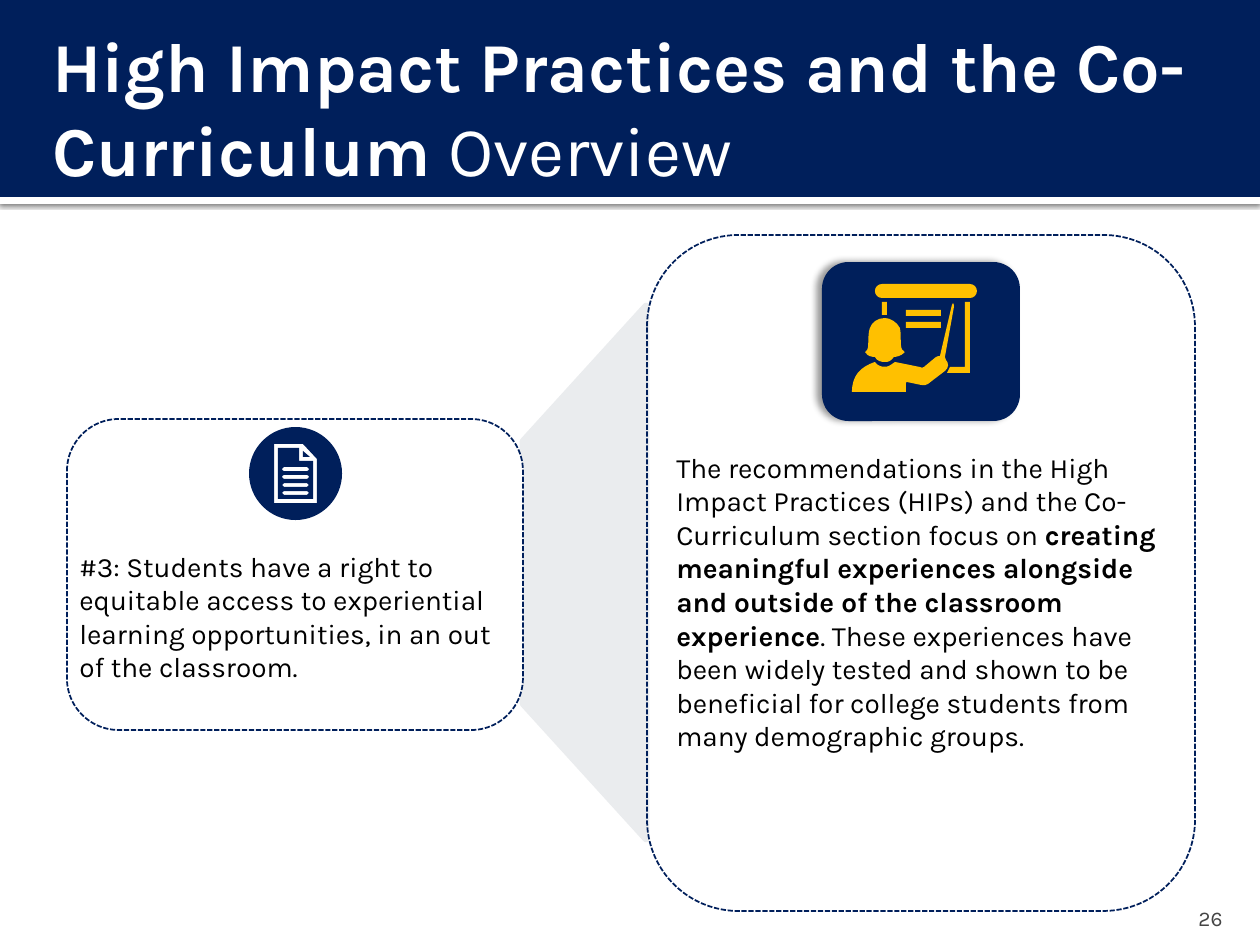
import lxml.etree
import pptx
import pptx.dml.color
import pptx.enum.dml
import pptx.enum.shapes
import pptx.enum.text
import pptx.oxml.ns
import pptx.util

PX = 914400 / 126
FONT = "Karla"
NAVY, GOLD, WHITE, BLACK = "001F5B", "FFC000", "FFFFFF", "000000"
KIND = pptx.enum.shapes.MSO_SHAPE
ALIGN = pptx.enum.text.PP_ALIGN
ANCHOR = pptx.enum.text.MSO_ANCHOR
qn = pptx.oxml.ns.qn


def emu(px):
    return pptx.util.Emu(round(px * PX))


def paint(target, color):
    """Give a fill, line or font colour object a hex colour."""
    target.rgb = pptx.dml.color.RGBColor.from_string(color)


def style(shape, fill=None, line=None, width=1, dashed=False):
    shape.shadow.inherit = False
    if fill:
        shape.fill.solid()
        paint(shape.fill.fore_color, fill)
    else:
        shape.fill.background()
    if line:
        paint(shape.line.color, line)
        shape.line.width = pptx.util.Pt(width)
        if dashed:
            shape.line.dash_style = pptx.enum.dml.MSO_LINE.SQUARE_DOT
    else:
        shape.line.fill.background()


def add_block(page, kind, box, **look):
    shape = page.shapes.add_shape(kind, *map(emu, box))
    style(shape, **look)
    return shape


def add_shadow(shape, alpha, blur, distance, angle):
    effects = shape.element.spPr.find(qn("a:effectLst"))
    shadow = lxml.etree.SubElement(
        effects, qn("a:outerShdw"), blurRad=str(pptx.util.Pt(blur)),
        dist=str(pptx.util.Pt(distance)), dir=str(angle * 60000),
        algn="ctr", rotWithShape="0")
    color = lxml.etree.SubElement(shadow, qn("a:srgbClr"), val=BLACK)
    lxml.etree.SubElement(color, qn("a:alpha"), val=str(alpha * 1000))


def add_text(page, box, spans, size=16, color=BLACK, align=ALIGN.LEFT,
             anchor=ANCHOR.TOP, grow=False):
    """Place one paragraph made of (text, bold) spans."""
    frame = page.shapes.add_textbox(*map(emu, box)).text_frame
    frame.word_wrap = True
    frame.vertical_anchor = anchor
    if grow:
        frame.auto_size = pptx.enum.text.MSO_AUTO_SIZE.SHAPE_TO_FIT_TEXT
    para = frame.paragraphs[0]
    para.alignment = align
    for text, bold in spans:
        span = para.add_run()
        span.text = text
        span.font.name = FONT
        span.font.size = pptx.util.Pt(size)
        span.font.bold = bold
        paint(span.font.color, color)
    return frame


def rectangle(x, y, w, h):
    return [(x, y), (x + w, y), (x + w, y + h), (x, y + h)]


def pill(x, y, w, h):
    """Rounded bar; a circle when w equals h."""
    r = h / 2
    k = 0.45 * r
    right, bottom = x + w, y + h
    return [(x + r, y), (right - r, y),
            (right - k, y, right, y + k, right, y + r),
            (right, bottom - k, right - k, bottom, right - r, bottom),
            (x + r, bottom),
            (x + k, bottom, x, bottom - k, x, y + r),
            (x, y + k, x + k, y, x + r, y)]


def add_outline(page, box, contours, color):
    """Draw contours of points and cubic curves (six numbers) as one freeform."""
    left, top = box[:2]
    builder = None
    for contour in contours:
        points = [(emu(left + step[-2]), emu(top + step[-1])) for step in contour]
        if builder is None:
            builder = page.shapes.build_freeform(*points[0], scale=1.0)
        else:
            builder.move_to(*points[0])
        builder.add_line_segments(points[1:], close=False)
    shape = builder.convert_to_shape()
    style(shape, fill=color)

    # Bend the segments that carry control points
    segments = list(shape.element.spPr.iter(qn("a:lnTo")))
    steps = [step for contour in contours for step in contour[1:]]
    for segment, step in zip(segments, steps):
        if len(step) == 2:
            continue
        curve = lxml.etree.Element(qn("a:cubicBezTo"))
        for x, y in (step[:2], step[2:4], step[4:]):
            lxml.etree.SubElement(curve, qn("a:pt"),
                                  x=str(emu(left + x) - shape.left),
                                  y=str(emu(top + y) - shape.top))
        segment.getparent().replace(segment, curve)


def document_icon(page, box):
    sheet = [(25, 17), (54, 17), (68, 32), (68, 76), (25, 76)]
    inside = [(29, 21), (50, 21), (50, 34), (64, 34), (64, 72), (29, 72)]
    fold = [(54, 24), (61, 30), (54, 30)]
    rows = [pill(33, 40 + 8 * i, 27, 4) for i in range(4)]
    add_outline(page, box, [pill(0, 0, 93, 93), sheet, inside, fold, *rows], NAVY)


def teacher_icon(page, box):
    board = [(118, 89), (95, 89), (98, 83), (113, 83), (113, 18), (118, 18)]
    body = [(54, 101), (54, 108), (0, 108), (0, 92, 8, 83, 23, 78),
            (24, 79, 26, 82, 28, 82), (30, 83, 35, 83, 37, 82),
            (39, 82, 40, 79, 43, 78), (48, 79), (68, 83),
            (69, 84, 71, 84, 72, 83), (84, 73), (86, 72, 87, 72, 88, 72),
            (100, 21), (101, 18, 102, 19, 102, 23), (93, 73), (94, 76),
            (97, 79, 97, 84, 93, 87), (76, 100), (74, 101, 72, 102, 69, 101),
            (55, 98), (54, 98, 54, 98, 54, 101)]
    head = [(33, 78), (37, 78, 39, 77, 42, 73), (44, 73, 49, 72, 52, 69),
            (53, 69, 53, 68, 52, 67), (47, 66, 50, 52, 48, 44),
            (45, 38, 38, 34, 33, 34), (26, 34, 20, 38, 18, 44),
            (15, 52, 18, 66, 14, 67), (13, 68, 13, 69, 14, 69),
            (15, 72, 20, 73, 23, 73), (25, 77, 29, 78, 33, 78)]
    lines = [rectangle(54, y, 35, 6) for y in (26, 38)]
    add_outline(page, box, [pill(23, 0, 102, 14), board, rectangle(30, 18, 5, 13),
                            *lines, body, head], GOLD)


def header(page, box):
    left, top, width, height = box
    strip = add_block(page, KIND.RECTANGLE, (left, top + height, width, 7), fill=WHITE)
    add_shadow(strip, alpha=60, blur=2.5, distance=0.8, angle=90)
    add_block(page, KIND.RECTANGLE, box, fill=NAVY)
    frame = add_text(page, (left + 40, top + 49, 1199, 116),
                     [("High Impact Practices and the Co-Curriculum ", True),
                      ("Overview", False)],
                     size=40, color=WHITE, anchor=ANCHOR.MIDDLE)
    frame.margin_right = pptx.util.Inches(0.05)


def page_number(page, box):
    frame = add_text(page, box, [("26", False)], size=12, color="454545",
                     align=ALIGN.RIGHT, anchor=ANCHOR.BOTTOM)
    frame.margin_bottom = 0


def funnel(page, box):
    """Trapezoid turned on its side, narrow end to the left."""
    left, top, width, height = box
    shift = (width - height) / 2
    shape = add_block(page, KIND.TRAPEZOID, (left + shift, top - shift, height, width),
                      fill="EAECEE", line="EAECEE", width=3.78)
    shape.adjustments[0] = 1.1
    shape.rotation = 270


def left_card(page, box):
    left, top, width, height = box
    add_block(page, KIND.ROUNDED_RECTANGLE, box, fill=WHITE, line=NAVY, dashed=True)
    add_text(page, (left, top + 124, width, 149),
             [("#3: Students have a right to equitable access to experiential "
               "learning opportunities, in an out of the classroom.", False)],
             grow=True)
    document_icon(page, (left + 182, top + 8))


def right_card(page, box):
    left, top, width, height = box
    add_text(page, (left + 17, top + 209, 514, 318),
             [("The recommendations in the High Impact Practices (HIPs) and the "
               "Co-Curriculum section focus on ", False),
              ("creating meaningful experiences alongside and outside of the "
               "classroom experience", True),
              (". These experiences have been widely tested and shown to be "
               "beneficial for college students from many demographic groups.", False)],
             grow=True)
    badge = add_block(page, KIND.ROUNDED_RECTANGLE, (left + 175, top + 27, 198, 159),
                      fill=NAVY)
    add_shadow(badge, alpha=40, blur=4, distance=3, angle=180)
    add_block(page, KIND.ROUNDED_RECTANGLE, box, line=NAVY, dashed=True)
    teacher_icon(page, (left + 205, top + 49))


def main():
    deck = pptx.Presentation()
    deck.slide_width, deck.slide_height = emu(1260), emu(945)
    page = deck.slides.add_slide(deck.slide_layouts[6])
    header(page, (0, 0, 1260, 197))
    page_number(page, (1134, 893, 101, 38))
    funnel(page, (523, 306, 123, 533))
    left_card(page, (67, 419, 456, 311))
    right_card(page, (647, 235, 548, 676))
    deck.save("out.pptx")


if __name__ == "__main__":
    main()
